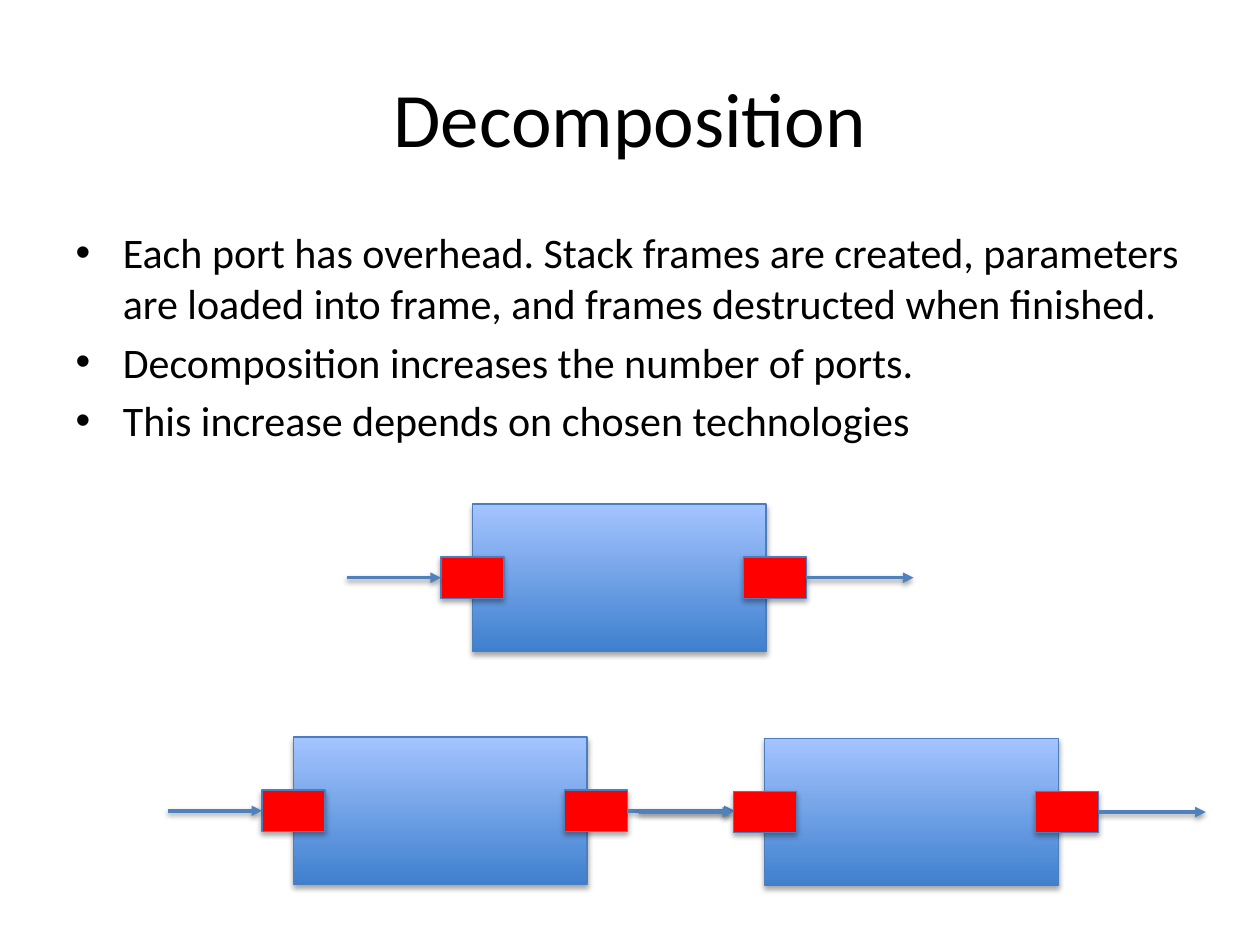
from lxml import etree
from pptx import Presentation, util as u
from pptx.dml.color import RGBColor
from pptx.enum import shapes, text
from pptx.oxml import parse_xml
from pptx.oxml.ns import nsdecls, qn

BLACK = RGBColor(0x00, 0x00, 0x00)
RED = RGBColor(0xFF, 0x00, 0x00)
DARK_BLUE = RGBColor(0x3F, 0x80, 0xCE)
LIGHT_BLUE = RGBColor(0xA4, 0xC4, 0xFF)
OUTLINE = RGBColor(0x4B, 0x7E, 0xBC)
ARROW = RGBColor(0x4F, 0x81, 0xBD)

BULLETS = [
    "Each port has overhead. Stack frames are created, parameters are loaded "
    "into frame, and frames destructed when finished.",
    "Decomposition increases the number of ports.",
    "This increase depends on chosen technologies",
]


def place(sp, left, top, width, height):
    """Move and size a shape in inches."""
    sp.left, sp.top = u.Inches(left), u.Inches(top)
    sp.width, sp.height = u.Inches(width), u.Inches(height)


def write(p, content, size=24, color=BLACK, font="Calibri", align=None):
    """Add a formatted run to a paragraph."""
    p.alignment = align
    r = p.add_run()
    r.text = content
    r.font.size, r.font.name = u.Pt(size), font
    r.font.color.rgb = color


def add_shadow(sp, opacity, distance):
    """Give a shape a soft black shadow falling straight down."""
    sp._element.spPr.append(parse_xml(
        f'<a:effectLst {nsdecls("a")}><a:outerShdw blurRad="{u.Pt(3.1)}" '
        f'dist="{u.Pt(distance)}" dir="5400000" rotWithShape="0">'
        f'<a:srgbClr val="000000"><a:alpha val="{opacity * 1000}"/></a:srgbClr>'
        '</a:outerShdw></a:effectLst>'))


def add_box(parent, left, top, width, height):
    """Add an outlined, shadowed rectangle."""
    sp = parent.add_shape(shapes.MSO_SHAPE.RECTANGLE, u.Inches(left),
                          u.Inches(top), u.Inches(width), u.Inches(height))
    sp.line.color.rgb, sp.line.width = OUTLINE, u.Pt(0.75)
    add_shadow(sp, 35, 1.8)
    return sp


def add_port(parent, left, top):
    """Add a red port."""
    sp = add_box(parent, left, top, 0.5, 0.33)
    sp.fill.solid()
    sp.fill.fore_color.rgb = RED
    return sp


def add_arrow(parent, x1, x2, y):
    """Add a horizontal arrow."""
    line = parent.add_connector(shapes.MSO_CONNECTOR.STRAIGHT, u.Inches(x1),
                                u.Inches(y), u.Inches(x2), u.Inches(y))
    line.line.color.rgb, line.line.width = ARROW, u.Pt(2)
    etree.SubElement(line.line._get_or_add_ln(), qn("a:tailEnd"), type="triangle")
    add_shadow(line, 38, 1.6)
    return line


def add_component(parent, left, top, width=4.5, height=1.17):
    """Draw a component with its ports and arrows inside the given box."""
    body = add_box(parent, left + 1, top, 2.33, height)
    body.fill.gradient()
    body.fill.gradient_angle = 90
    for stop, color in zip(body.fill.gradient_stops, (DARK_BLUE, LIGHT_BLUE)):
        stop.color.rgb = color
    middle = top + height / 2
    port_top = middle - 0.33 / 2
    entry = add_port(parent, left + 0.75, port_top)
    leave = add_port(parent, left + 3.15, port_top)
    add_arrow(parent, left, left + 0.75, middle).end_connect(entry, 1)
    add_arrow(parent, left + 3.65, left + width, middle).begin_connect(leave, 3)


def add_title(sp, left, top, width, height):
    """Fill the title placeholder."""
    place(sp, left, top, width, height)
    sp.text_frame.vertical_anchor = text.MSO_ANCHOR.MIDDLE
    write(sp.text_frame.paragraphs[0], "Decomposition", size=44,
          align=text.PP_ALIGN.CENTER)


def add_bullets(sp, left, top, width, height):
    """Fill the body placeholder with the bullet list."""
    place(sp, left, top, width, height)
    tf = sp.text_frame
    tf.auto_size = text.MSO_AUTO_SIZE.NONE
    for i, item in enumerate(BULLETS):
        p = tf.add_paragraph() if i else tf.paragraphs[0]
        p.space_before = u.Pt(4.8 if i else 0)
        write(p, item)


def main():
    """Build and save the slide."""
    prs = Presentation()
    prs.slide_width, prs.slide_height = u.Inches(10), u.Inches(7.5)
    s = prs.slides.add_slide(prs.slide_layouts[1])
    add_title(s.shapes.title, 0.5, 0.3, 9, 1.25)
    add_bullets(s.placeholders[1], 0.5, 1.75, 9, 1.75)
    add_component(s.shapes.add_group_shape().shapes, 2.75, 4)
    add_component(s.shapes, 1.33, 5.85)
    add_component(s.shapes, 5.07, 5.86)
    prs.save("out.pptx")


if __name__ == "__main__":
    main()
